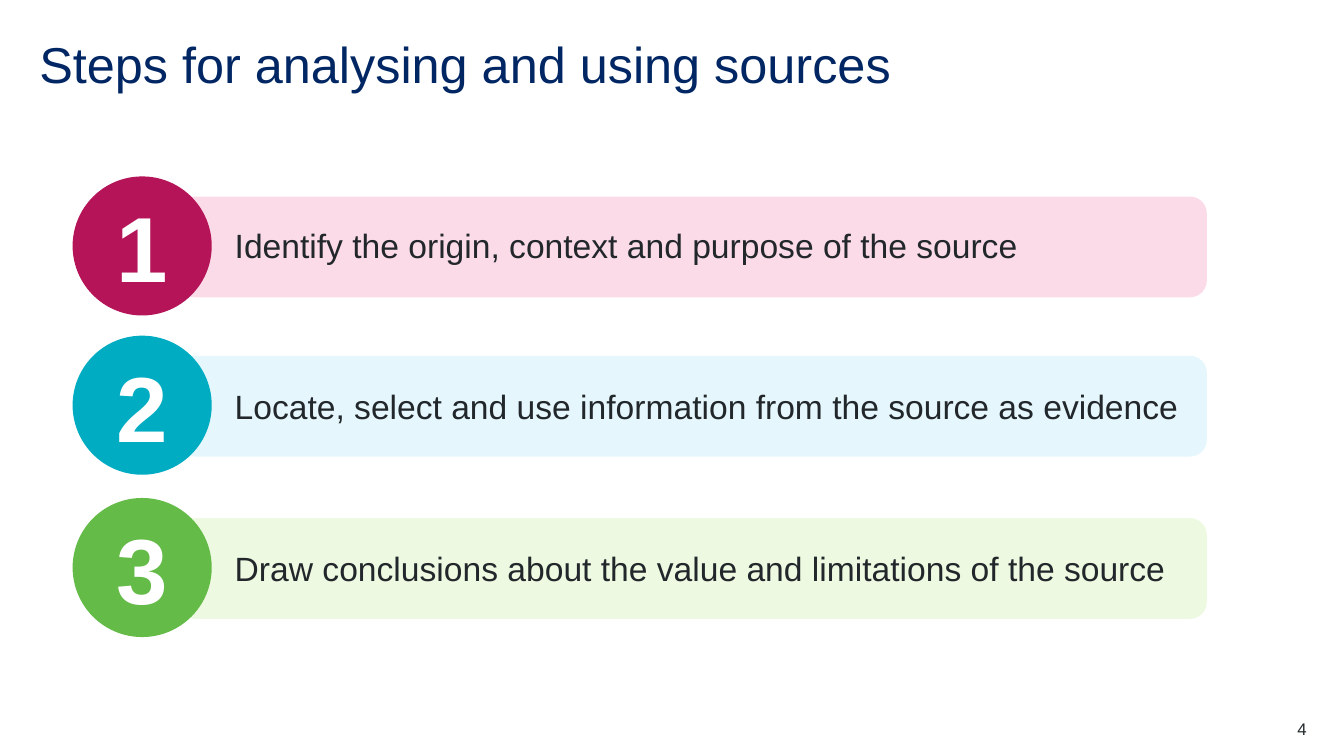
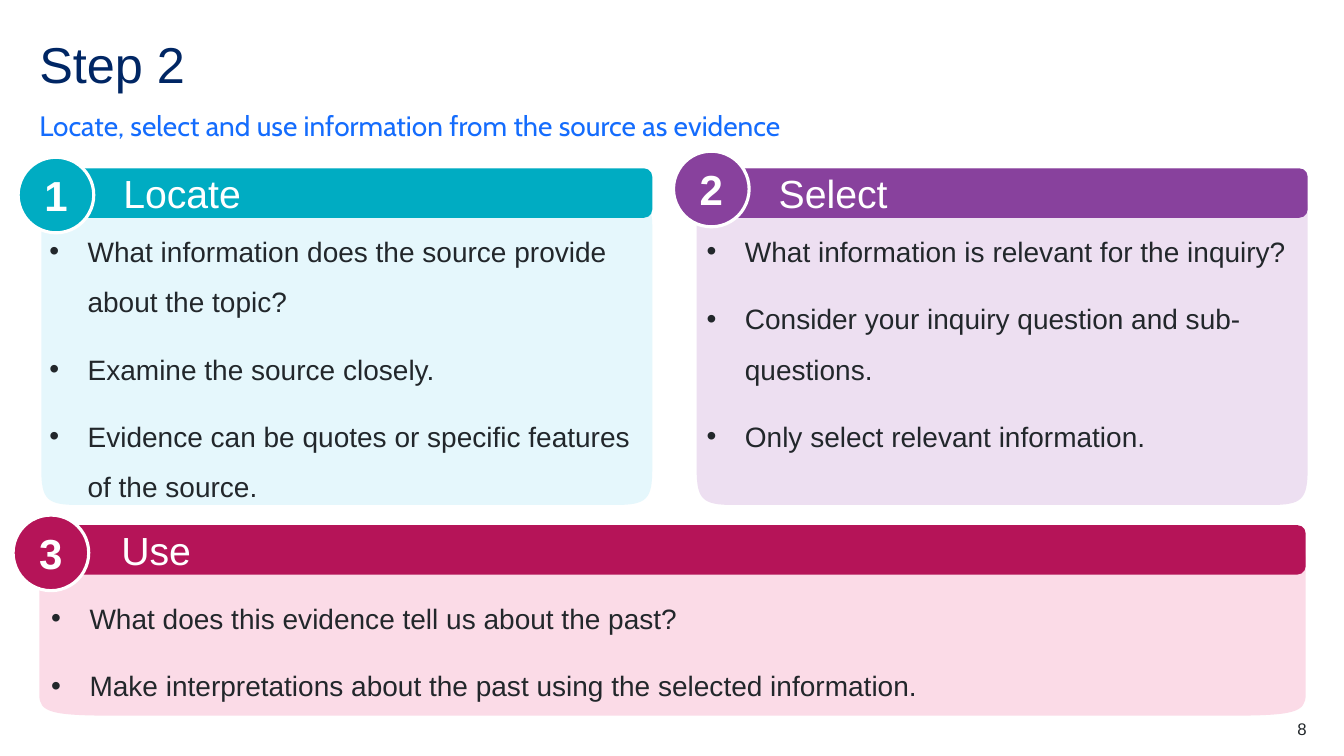
from lxml.etree import SubElement
from pptx import Presentation
from pptx.dml.color import RGBColor
from pptx.enum.shapes import MSO_SHAPE as Shape
from pptx.enum.text import MSO_ANCHOR as Anchor, PP_ALIGN as Align
from pptx.oxml.ns import qn
from pptx.util import Inches, Pt

WIDTH, HEIGHT = 13.33, 7.5
MARGIN = 0.39
CONTENT_WIDTH = 12.56
COLORS = {
    "title": "002664", "subtitle": "146CFD", "text": "22272B", "white": "FFFFFF",
    "pink": "B51458", "pale pink": "FBDBE7",
    "teal": "00ACC2", "pale teal": "E5F7FC",
    "green": "64BB47", "pale green": "EDF9E0",
    "purple": "88419D", "pale purple": "EDDFF1",
}

# text, hue, top of the bar, bottom inset of the bar
STEPS = [
    ("Identify the origin, context and purpose of the source", "pink", 1.95, 0.04),
    ("Locate, select and use information from the source as evidence", "teal", 3.53, 0),
    ("Draw conclusions about the value and limitations of the source", "green", 5.14, 0),
]
BAR_LEFT, BAR_WIDTH, BAR_HEIGHT = 1.77, 10.2, 1
STEP_BADGE, STEP_BADGE_LEFT, STEP_BADGE_RISE = 1.38, 0.72, 0.2

SUBTITLE = "Locate, select and use information from the source as evidence"
HEADER_HEIGHT, PANEL_BADGE = 0.49, 0.75
# box: left, top, width, height; corners: (across, down) at the top and bottom;
# badge: how far it reaches out to the left and above
PANELS = [
    dict(name="Locate", hue="teal", box=(0.41, 1.67, 6.06, 3.34), badge=(0.23, 0.11),
         corners=((0.55, 0.56), (0.37, 0.36)), text_box=(MARGIN, 2.16, 6.08, 2.8),
         points=["What information does the source provide about the topic?",
                 "Examine the source closely.",
                 "Evidence can be quotes or specific features of the source."]),
    dict(name="Select", hue="purple", box=(6.91, 1.67, 6.06, 3.34), badge=(0.23, 0.17),
         corners=((0.55, 0.38), (0.37, 0.36)), text_box=(6.91, 2.16, 6.06, 2.42),
         points=["What information is relevant for the inquiry?",
                 "Consider your inquiry question and sub-questions.",
                 "Only select relevant information."]),
    dict(name="Use", hue="pink", box=(MARGIN, 5.21, 12.56, 1.89), badge=(0.26, 0.1),
         corners=((1.14, 0.32), (0.77, 0.21)), text_box=(0.41, 5.8, 12.54, 1.16),
         points=["What does this evidence tell us about the past?",
                 "Make interpretations about the past using the selected information."]),
]


def color(name):
    return RGBColor.from_string(COLORS[name])


def paint(shape, fill, line=None):
    shape.shadow.inherit = False
    shape.fill.solid()
    shape.fill.fore_color.rgb = color(fill)
    if line:
        shape.line.color.rgb = color(line)
        shape.line.width = Pt(2.25)
    else:
        shape.line.fill.background()


def add_bullet(para):
    props = para._p.get_or_add_pPr()
    props.set("marL", str(Inches(0.38)))
    props.set("indent", str(Inches(-0.38)))
    SubElement(props, qn("a:buFont")).set("typeface", "Arial")
    SubElement(props, qn("a:buChar")).set("char", "•")


def write(shape, lines, size, ink="text", font="Arial", bold=False, align=Align.LEFT,
          anchor=Anchor.TOP, insets=(0, 0, 0, 0), spacing=None, after=None, bullets=False):
    frame = shape.text_frame
    frame.word_wrap = True
    frame.vertical_anchor = anchor
    (frame.margin_left, frame.margin_top,
     frame.margin_right, frame.margin_bottom) = map(Inches, insets)
    for index, line in enumerate(lines):
        para = frame.add_paragraph() if index else frame.paragraphs[0]
        para.text = line
        para.alignment = align
        if spacing:
            para.line_spacing = spacing
        if after:
            para.space_after = Pt(after)
        if bullets:
            add_bullet(para)
        para.font.size, para.font.name, para.font.bold = Pt(size), font, bold
        para.font.color.rgb = color(ink)


def add_text(page, box, lines, size, **style):
    write(page.shapes.add_textbox(*map(Inches, box)), lines, size, **style)


def add_bar(page, box, fill, text, size, ink, insets):
    bar = page.shapes.add_shape(Shape.ROUNDED_RECTANGLE, *map(Inches, box))
    paint(bar, fill)
    write(bar, [text], size, ink=ink, anchor=Anchor.MIDDLE, insets=insets)


def add_badge(page, left, top, diameter, number, fill, size, line=None):
    badge = page.shapes.add_shape(Shape.OVAL, *map(Inches, (left, top, diameter, diameter)))
    paint(badge, fill, line)
    write(badge, [str(number)], size, ink="white", bold=True, align=Align.CENTER,
          anchor=Anchor.MIDDLE, insets=(0.1, 0.05, 0.1, 0.05))


def bend(segment, start, corner, end, pull):
    """Turn a straight segment into a curve pulled towards the corner."""
    segment.tag = qn("a:cubicBezTo")
    for index, side in enumerate((start, end)):
        x, y = (round(p + pull * (c - p)) for p, c in zip(side, corner))
        handle = SubElement(segment, qn("a:pt"))
        handle.set("x", str(x))
        handle.set("y", str(y))
        segment.insert(index, handle)


def add_panel(page, box, corners, fill):
    left, top, width, height = map(Inches, box)
    (top_x, top_y), (low_x, low_y) = [map(Inches, pair) for pair in corners]
    # start, corner, end and pull of each turn, measured from the panel's top left
    turns = [
        ((0, top_y), (0, 0), (top_x, 0), 0.55),
        ((width - top_x, 0), (width, 0), (width, top_y), 0.55),
        ((width, height - low_y), (width, height), (width - low_x, height), 0.85),
        ((low_x, height), (0, height), (0, height - low_y), 0.85),
    ]
    outline = [point for start, _, end, _ in turns for point in (start, end)]
    builder = page.shapes.build_freeform(*outline[0])
    builder.add_line_segments(outline[1:], close=True)
    panel = builder.convert_to_shape(left, top)
    segments = list(panel._element.iter(qn("a:lnTo")))
    for segment, turn in zip(segments[::2], turns):
        bend(segment, *turn)
    paint(panel, fill)


def add_page(deck, title, number):
    page = deck.slides.add_slide(deck.slide_layouts[6])
    add_text(page, (MARGIN, 0.4, CONTENT_WIDTH, 0.6), [title], 36, ink="title", spacing=0.9)
    add_text(page, (12.17, 7.13, 0.79, 0.2), [str(number)], 12, align=Align.RIGHT)
    return page


def build_overview(deck):
    page = add_page(deck, "Steps for analysing and using sources", 4)
    for number, (text, hue, top, bottom_inset) in enumerate(STEPS, 1):
        add_bar(page, (BAR_LEFT, top, BAR_WIDTH, BAR_HEIGHT), "pale " + hue, text, 24,
                "text", (0.51, 0, 0.1, bottom_inset))
        add_badge(page, STEP_BADGE_LEFT, top - STEP_BADGE_RISE, STEP_BADGE, number, hue, 66)


def build_step_two(deck):
    page = add_page(deck, "Step 2", 8)
    add_text(page, (MARGIN, 1.07, CONTENT_WIDTH, 0.34), [SUBTITLE], 20, ink="subtitle",
             font="Cabin", anchor=Anchor.BOTTOM, spacing=1.5, after=12)
    for number, panel in enumerate(PANELS, 1):
        left, top, width, _ = panel["box"]
        overhang, rise = panel["badge"]
        hue = panel["hue"]
        add_panel(page, panel["box"], panel["corners"], "pale " + hue)
        add_bar(page, (left, top, width, HEADER_HEIGHT), hue, panel["name"], 28, "white",
                (0.79, 0.05, 0.1, 0.05))
        add_badge(page, left - overhang, top - rise, PANEL_BADGE, number, hue, 30,
                  line="white")
        add_text(page, panel["text_box"], panel["points"], 20, insets=(0.1, 0, 0, 0),
                 spacing=1.5, after=12, bullets=True)


def main():
    deck = Presentation()
    deck.slide_width, deck.slide_height = Inches(WIDTH), Inches(HEIGHT)
    build_overview(deck)
    build_step_two(deck)
    deck.save("out.pptx")


if __name__ == "__main__":
    main()
